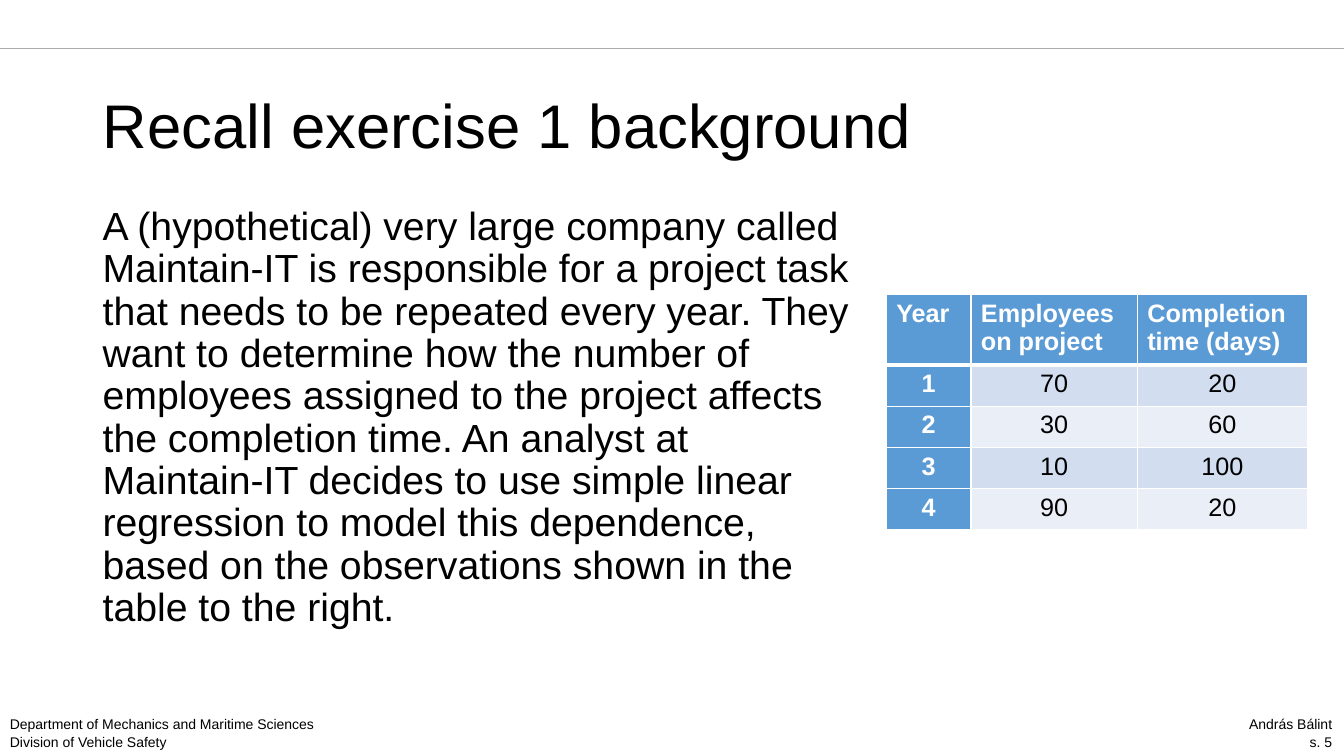
from dataclasses import dataclass

from lxml.etree import SubElement
from pptx import Presentation
from pptx.dml.color import RGBColor
from pptx.enum.shapes import MSO_CONNECTOR as Connector
from pptx.enum.text import MSO_ANCHOR as Anchor, MSO_AUTO_SIZE as AutoSize, PP_ALIGN as Align
from pptx.oxml.ns import qn
from pptx.util import Inches, Pt


@dataclass(frozen=True)
class Theme:
    """Colours, font and type sizes of the slide."""
    font: str = "Arial"
    ink: str = "000000"
    paper: str = "FFFFFF"
    rule: str = "AFABAB"
    accent: str = "5B9BD5"
    bands: tuple = ("D2DEEF", "EAEFF7")
    title_size: int = 44
    body_size: int = 28
    table_size: int = 18
    footer_size: int = 10


def write(frame, text, theme, size, color=None, bold=False, align=Align.LEFT, spacing=1.0, gap=0):
    """Fill a text frame with one formatted paragraph per line of text."""
    for index, line in enumerate(text.split("\n")):
        paragraph = frame.add_paragraph() if index else frame.paragraphs[0]
        paragraph.alignment = align
        paragraph.line_spacing = spacing
        paragraph.space_before = Pt(gap if index else 0)
        run = paragraph.add_run()
        run.text = line
        run.font.name = theme.font
        run.font.size = Pt(size)
        run.font.bold = bold
        run.font.color.rgb = RGBColor.from_string(color or theme.ink)


class SlideBuilder:
    """Places styled elements by percentages of the slide's size."""

    def __init__(self, presentation, theme):
        """Add a title-only slide and keep its style."""
        self.presentation = presentation
        self.theme = theme
        self.slide = presentation.slides.add_slide(presentation.slide_layouts[5])

    def across(self, share):
        """Convert a percentage of the slide width to a length."""
        return round(self.presentation.slide_width * share / 100)

    def down(self, share):
        """Convert a percentage of the slide height to a length."""
        return round(self.presentation.slide_height * share / 100)

    def area(self, left, top, width, height):
        """Convert a box in percentages to lengths."""
        return self.across(left), self.down(top), self.across(width), self.down(height)

    def rule(self, top):
        """Draw a hairline across the slide."""
        y = self.down(top)
        line = self.slide.shapes.add_connector(Connector.STRAIGHT, 0, y, self.across(100), y)
        line.line.color.rgb = RGBColor.from_string(self.theme.rule)
        line.line.width = Pt(0.25)
        SubElement(line._element.spPr, qn("a:effectLst"))

    def title(self, text, box):
        """Move and fill the title placeholder."""
        shape = self.slide.shapes.title
        shape.left, shape.top, shape.width, shape.height = self.area(*box)
        frame = shape.text_frame
        frame.auto_size = AutoSize.NONE
        frame.vertical_anchor = Anchor.MIDDLE
        write(frame, text, self.theme, self.theme.title_size, spacing=0.9)

    def text(self, text, box, size, **style):
        """Add a wrapping text box."""
        frame = self.slide.shapes.add_textbox(*self.area(*box)).text_frame
        frame.word_wrap = True
        write(frame, text, self.theme, size, **style)

    def borders(self, cell, **widths):
        """Give a cell white borders of the given widths in points."""
        properties = cell._tc.get_or_add_tcPr()
        for side in "LRTB":
            line = SubElement(properties, qn(f"a:ln{side}"), w=str(Pt(widths.get(side, 1))))
            fill = SubElement(line, qn("a:solidFill"))
            SubElement(fill, qn("a:srgbClr"), val=self.theme.paper)

    def table(self, rows, left, top, widths, heights):
        """Add a banded table with a highlighted header row and first column."""
        theme = self.theme
        box = self.area(left, top, sum(widths), sum(heights))
        table = self.slide.shapes.add_table(len(rows), len(widths), *box).table
        for column, width in zip(table.columns, widths):
            column.width = self.across(width)
        for row, height in zip(table.rows, heights):
            row.height = self.down(height)
        for row_index, values in enumerate(rows):
            for column_index, value in enumerate(values):
                cell = table.cell(row_index, column_index)
                header = row_index == 0
                strong = header or column_index == 0
                self.borders(cell, T=3 if row_index == 1 else 1, B=3 if header else 1)
                cell.fill.solid()
                color = theme.accent if strong else theme.bands[(row_index - 1) % 2]
                cell.fill.fore_color.rgb = RGBColor.from_string(color)
                write(cell.text_frame, str(value), theme, theme.table_size,
                      color=theme.paper if strong else theme.ink, bold=strong,
                      align=Align.LEFT if header else Align.CENTER)


BACKGROUND = (
    "A (hypothetical) very large company called Maintain-IT is responsible for a project task "
    "that needs to be repeated every year. They want to determine how the number of employees "
    "assigned to the project affects the completion time. An analyst at Maintain-IT decides to "
    "use simple linear regression to model this dependence, based on the observations shown in "
    "the table to the right."
)
OBSERVATIONS = [
    ("Year", "Employees on project", "Completion time (days)"),
    (1, 70, 20),
    (2, 30, 60),
    (3, 10, 100),
    (4, 90, 20),
]


def main():
    """Build and save the slide."""
    presentation = Presentation()
    presentation.slide_width, presentation.slide_height = Inches(13.33), Inches(7.5)
    theme = Theme()
    builder = SlideBuilder(presentation, theme)
    builder.rule(6.4)
    builder.text("Department of Mechanics and Maritime Sciences\nDivision of Vehicle Safety",
                 (0, 94, 32.56, 6), theme.footer_size, gap=1)
    builder.text("András Bálint\ns. 5", (71.34, 94, 28.51, 6), theme.footer_size,
                 align=Align.RIGHT, gap=1)
    builder.title("Recall exercise 1 background", (6.9, 7.33, 86.27, 19.33))
    builder.text(BACKGROUND, (6.9, 26.67, 57.01, 63.47), theme.body_size, spacing=0.9)
    builder.table(OBSERVATIONS, 65.94, 38.93, (6.3, 12.38, 12.68), [8.93] + [5.45] * 4)
    presentation.save("out.pptx")


if __name__ == "__main__":
    main()
